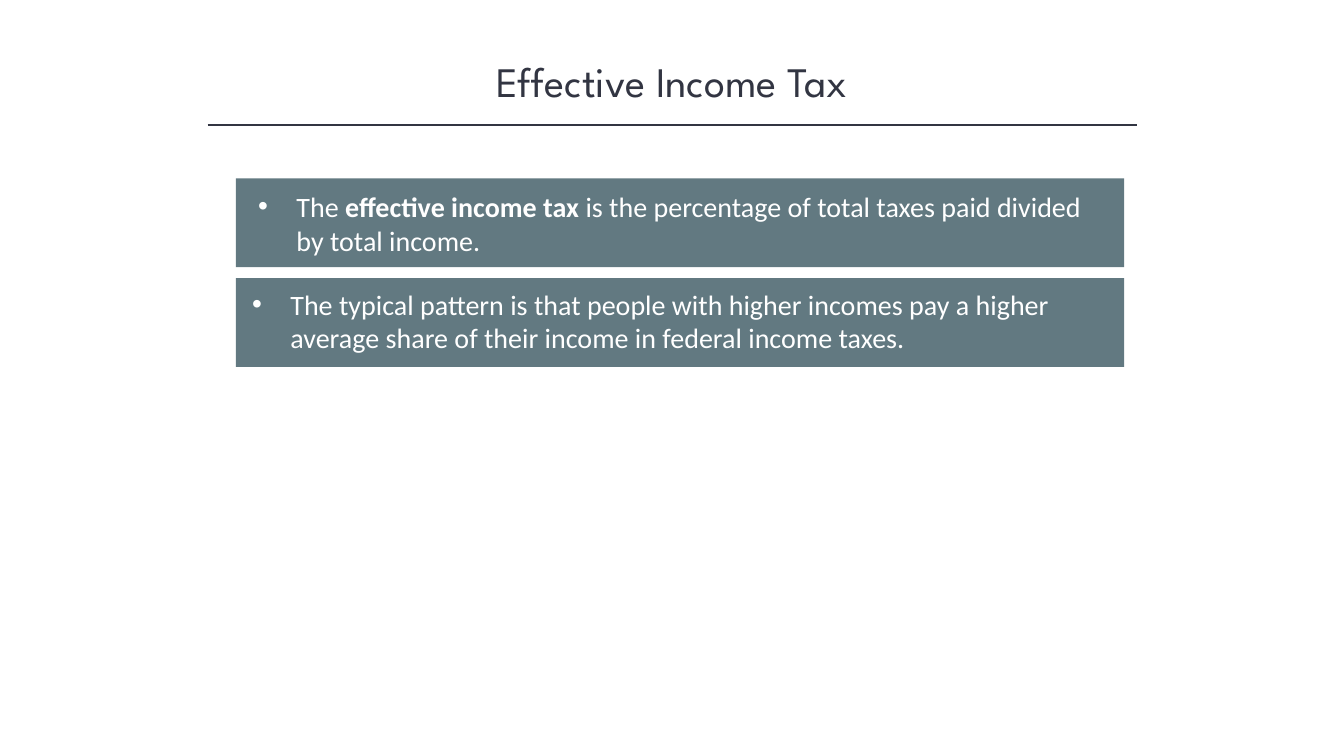
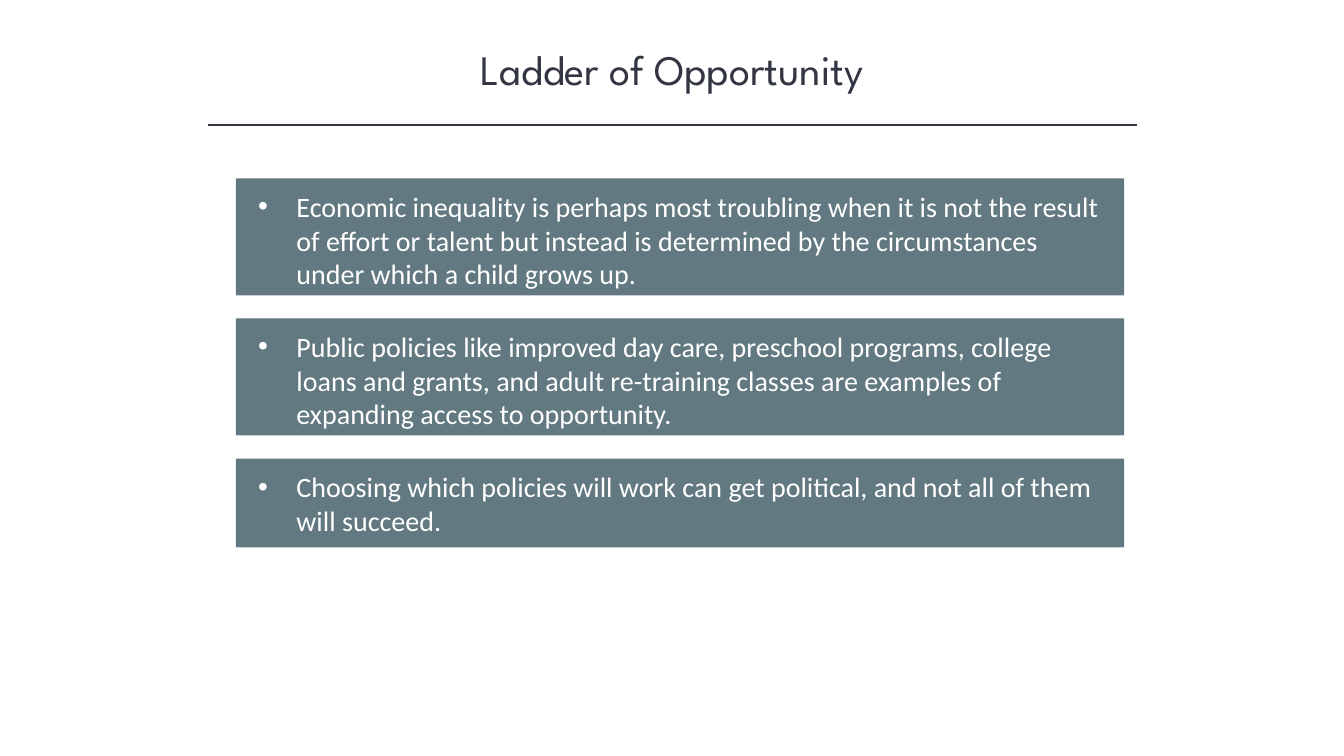
from dataclasses import dataclass

from lxml.etree import SubElement
from pptx import Presentation
from pptx.dml.color import RGBColor
from pptx.enum.shapes import MSO_CONNECTOR, MSO_SHAPE
from pptx.enum.text import MSO_ANCHOR, PP_ALIGN
from pptx.oxml.ns import qn
from pptx.util import Inches, Pt


@dataclass(frozen=True)
class Theme:
    ink: RGBColor = RGBColor(0x32, 0x35, 0x42)
    card: RGBColor = RGBColor(0x62, 0x79, 0x81)
    card_text: RGBColor = RGBColor(0xFF, 0xFF, 0xFF)
    title_font: str = "League Spartan"
    body_font: str = "Calibri"
    title_size: int = 30
    body_size: int = 20


THEME = Theme()
SLIDE_WIDTH, SLIDE_HEIGHT = 13.33, 7.5
TITLE_WIDTH, TITLE_HEIGHT = 10, 0.61
RULE_LEFT, RULE_RIGHT, RULE_TOP = 2.06, 11.28, 1.24
CARD_LEFT, CARD_TOP, CARD_WIDTH = 2.34, 1.77, 8.81
LINE_HEIGHT, CARD_PADDING = 0.28, 0.32
TEXT_WIDTH = 8.34
BULLET_INDENT = 0.38
USUAL_INSET = (0.22, 0.11)


def add_runs(paragraph, runs, *, font, size, color):
    """Add (text, bold) pairs in one typeface."""
    for text, bold in runs:
        run = paragraph.add_run()
        run.text = text
        run.font.name = font
        run.font.size = Pt(size)
        run.font.bold = bold
        run.font.color.rgb = color


def add_bullet(paragraph):
    properties = paragraph._p.get_or_add_pPr()
    properties.set("marL", str(Inches(BULLET_INDENT)))
    properties.set("indent", str(-Inches(BULLET_INDENT)))
    SubElement(properties, qn("a:buFont"), typeface="Arial")
    SubElement(properties, qn("a:buChar"), char="•")


def set_title(slide, text, top):
    title = slide.shapes.title
    title.left, title.top = Inches((SLIDE_WIDTH - TITLE_WIDTH) / 2), Inches(top)
    title.width, title.height = Inches(TITLE_WIDTH), Inches(TITLE_HEIGHT)
    title.text_frame.vertical_anchor = MSO_ANCHOR.BOTTOM
    paragraph = title.text_frame.paragraphs[0]
    paragraph.alignment = PP_ALIGN.CENTER
    add_runs(paragraph, [(text, False)], font=THEME.title_font,
             size=THEME.title_size, color=THEME.ink)


def add_title_rule(slide):
    rule = slide.shapes.add_connector(
        MSO_CONNECTOR.STRAIGHT, Inches(RULE_LEFT), Inches(RULE_TOP),
        Inches(RULE_RIGHT), Inches(RULE_TOP))
    rule.line.color.rgb = THEME.ink
    rule.line.width = Pt(1)
    SubElement(rule._element.spPr, qn("a:effectLst"))


def add_card(slide, runs, *, top, height, inset):
    card = slide.shapes.add_shape(
        MSO_SHAPE.RECTANGLE, Inches(CARD_LEFT), Inches(top),
        Inches(CARD_WIDTH), Inches(height))
    card.shadow.inherit = False
    card.fill.solid()
    card.fill.fore_color.rgb = THEME.card
    card.line.fill.background()
    left_inset, top_inset = inset
    frame = card.text_frame
    frame.word_wrap = True
    frame.vertical_anchor = MSO_ANCHOR.TOP
    frame.margin_left, frame.margin_top = Inches(left_inset), Inches(top_inset)
    frame.margin_right = Inches(CARD_WIDTH - TEXT_WIDTH - left_inset)
    frame.margin_bottom = 0
    paragraph = frame.paragraphs[0]
    paragraph.alignment = PP_ALIGN.LEFT
    add_bullet(paragraph)
    add_runs(paragraph, runs, font=THEME.body_font,
             size=THEME.body_size, color=THEME.card_text)


def add_card_slide(presentation, title, cards, *, title_top, gap):
    """Stack cards, each given as (line count, inset, runs), under a title."""
    slide = presentation.slides.add_slide(presentation.slide_layouts[5])
    set_title(slide, title, title_top)
    add_title_rule(slide)
    top = CARD_TOP
    for line_count, inset, runs in cards:
        height = CARD_PADDING + line_count * LINE_HEIGHT
        add_card(slide, runs, top=top, height=height, inset=inset)
        top += height + gap


def main():
    presentation = Presentation()
    presentation.slide_width = Inches(SLIDE_WIDTH)
    presentation.slide_height = Inches(SLIDE_HEIGHT)
    add_card_slide(presentation, "Effective Income Tax", [
        (2, USUAL_INSET, [
            ("The ", False),
            ("effective income tax ", True),
            ("is the percentage of total taxes paid divided by total income.", False)]),
        (2, (0.16, 0.09), [
            ("The typical pattern is that people with higher incomes pay a higher "
             "average share of their income in federal income taxes.", False)]),
    ], title_top=0.49, gap=0.11)
    add_card_slide(presentation, "Ladder of Opportunity", [
        (3, USUAL_INSET, [
            ("Economic inequality is perhaps most troubling when it is not the result "
             "of effort or talent but instead is determined by the circumstances "
             "under which a child grows up.", False)]),
        (3, USUAL_INSET, [
            ("Public policies like improved day care, preschool programs, college "
             "loans and grants, and adult re-training classes are examples of "
             "expanding access to opportunity.", False)]),
        (2, USUAL_INSET, [
            ("Choosing which policies will work can get political, and not all of "
             "them will succeed.", False)]),
    ], title_top=0.37, gap=0.23)
    presentation.save("out.pptx")


if __name__ == "__main__":
    main()
